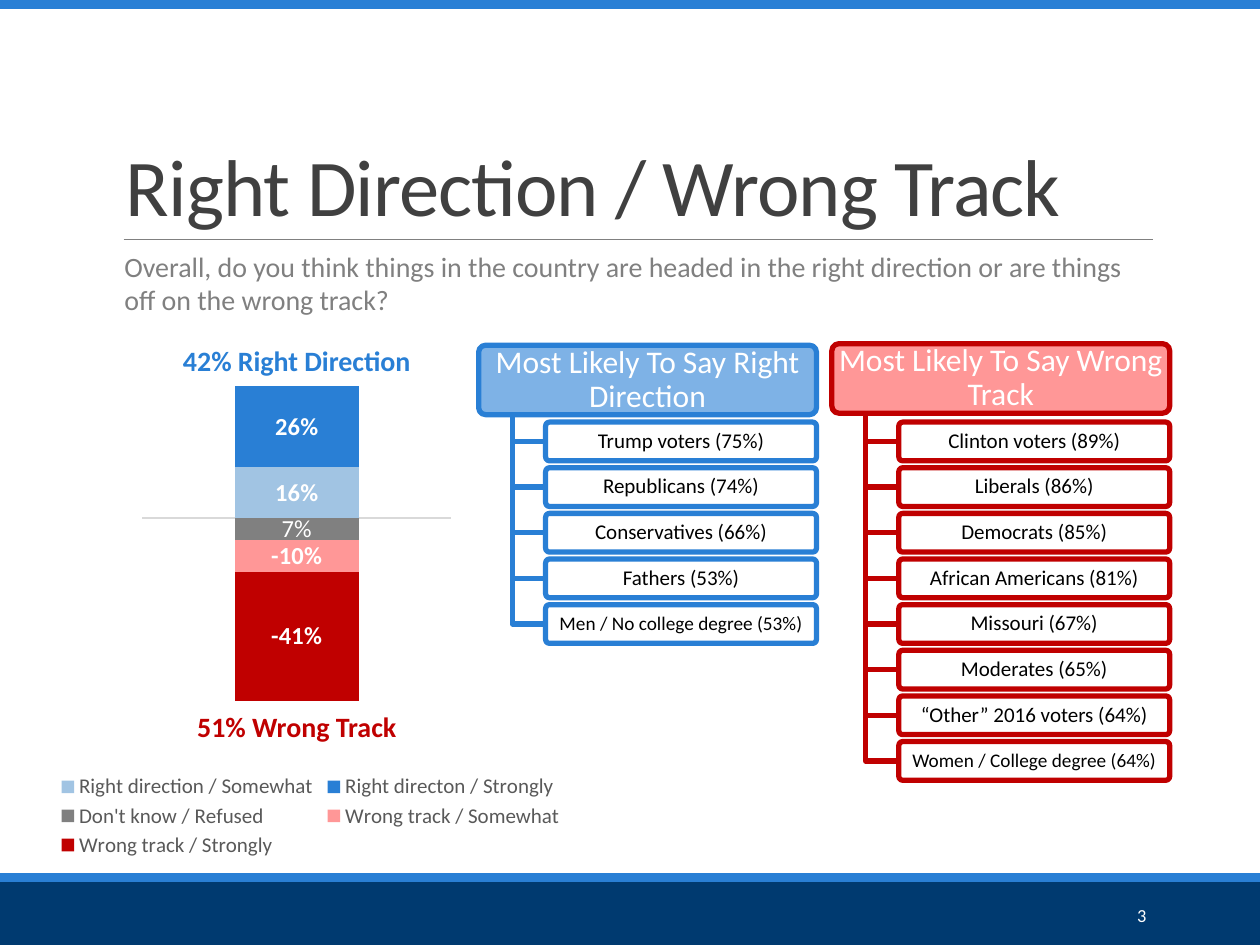
"""Builds the polling slide on right direction versus wrong track."""
import lxml.etree
import pptx
import pptx.chart.data
import pptx.dml.color
import pptx.enum.chart
import pptx.enum.shapes
import pptx.enum.text
import pptx.oxml.ns
import pptx.util
from dataclasses import dataclass

Cm, Pt = pptx.util.Cm, pptx.util.Pt
qn = pptx.oxml.ns.qn
ALIGN, ANCHOR = pptx.enum.text.PP_ALIGN, pptx.enum.text.MSO_ANCHOR
SHAPE = pptx.enum.shapes.MSO_SHAPE


@dataclass(frozen=True)
class Theme:
    """Colours, typeface and type sizes of the slide."""
    font: str = "Calibri"
    navy: str = "003A70"
    blue: str = "297FD5"
    soft_blue: str = "7EB2E6"
    pale_blue: str = "A1C4E3"
    red: str = "C00000"
    pale_red: str = "FF9797"
    grey: str = "808080"
    dark: str = "404040"
    legend: str = "595959"
    rule: str = "D9D9D9"
    white: str = "FFFFFF"
    black: str = "000000"
    title: float = 46
    header: float = 18
    body: float = 16
    label: float = 14
    item: float = 12
    small: float = 11
    number: float = 10.5


THEME = Theme()

BANDS = [(17.78, 1.27, THEME.navy), (17.6, 0.18, THEME.blue), (0, 0.18, THEME.blue)]

TEXTS = [
    ("Right Direction / Wrong Track", (2.29, 0.79, 20.96, 4.04),
     dict(size=THEME.title, color=THEME.dark),
     dict(anchor=ANCHOR.BOTTOM, spacing=0.85, tracking=-50)),
    ("3", (20.62, 17.93, 2.74, 1.02), dict(size=THEME.number, color=THEME.white),
     dict(align=ALIGN.RIGHT, anchor=ANCHOR.MIDDLE)),
    ("Overall, do you think things in the country are headed in the right direction "
     "or are things off on the wrong track?", (2.26, 4.9, 21.11, 1.63),
     dict(size=THEME.body, color=THEME.grey), {}),
]
TOTALS = [
    ("42% Right Direction", (3.28, 6.81, 5.41, 0.94),
     dict(size=THEME.body, color=THEME.blue, bold=True), dict(align=ALIGN.CENTER)),
    ("51% Wrong Track", (3.28, 14.17, 5.41, 0.94),
     dict(size=THEME.body, color=THEME.red, bold=True), dict(align=ALIGN.CENTER)),
]

PANELS = [
    dict(title="Most Likely To Say Right Direction", left=9.65, top=6.96,
         fill=THEME.soft_blue, line=THEME.blue,
         groups=["Trump voters (75%)", "Republicans (74%)", "Conservatives (66%)",
                 "Fathers (53%)", "Men / No college degree (53%)"]),
    dict(title="Most Likely To Say Wrong Track", left=16.77, top=6.93,
         fill=THEME.pale_red, line=THEME.red,
         groups=["Clinton voters (89%)", "Liberals (86%)", "Democrats (85%)",
                 "African Americans (81%)", "Missouri (67%)", "Moderates (65%)",
                 "“Other” 2016 voters (64%)", "Women / College degree (64%)"]),
]
HEADER_WIDTH, HEADER_HEIGHT = 6.81, 1.4
TRUNK_INDENT, GROUP_INDENT = 0.68, 1.35
GROUP_TOP, GROUP_STEP, GROUP_HEIGHT = 8.51, 0.92, 0.78

SERIES = [
    ("Right direction / Somewhat", 0.16, THEME.pale_blue),
    ("Right directon / Strongly", 0.26, THEME.blue),
    ("Don't know / Refused", -0.07, THEME.grey),
    ("Wrong track / Somewhat", -0.10, THEME.pale_red),
    ("Wrong track / Strongly", -0.41, THEME.red),
]
CUSTOM_LABELS = {"Don't know / Refused": "7%"}


def rgb(value):
    return pptx.dml.color.RGBColor.from_string(value)


def apply(target, values):
    for name, value in values.items():
        setattr(target, name, value)


def style_font(font, size, color, bold=False):
    apply(font, dict(name=THEME.font, size=Pt(size), bold=bold))
    font.fill.solid()
    font.fill.fore_color.rgb = rgb(color)


def paint(shape, fill=None, line=None, width=3):
    for part, color in ((shape.fill, fill), (shape.line.fill, line)):
        if color:
            part.solid()
            part.fore_color.rgb = rgb(color)
        else:
            part.background()
    if line:
        shape.line.width = Pt(width)
    shape.shadow.inherit = False


def write(box, text, font, align=ALIGN.LEFT, anchor=ANCHOR.TOP, spacing=1.0,
          inset=None, tracking=None):
    frame = box.text_frame
    apply(frame, dict(word_wrap=True, vertical_anchor=anchor))
    if inset is not None:
        sides = ("left", "right", "top", "bottom")
        apply(frame, {f"margin_{side}": Cm(inset) for side in sides})
    para = frame.paragraphs[0]
    apply(para, dict(alignment=align, line_spacing=spacing))
    span = para.add_run()
    span.text = text
    style_font(span.font, **font)
    if tracking is not None:
        span.font._element.set("spc", str(tracking))


def add_texts(page, texts):
    for text, place, font, layout in texts:
        write(page.shapes.add_textbox(*map(Cm, place)), text, font, **layout)


def add_frame(page):
    for top, height, color in BANDS:
        band = page.shapes.add_shape(SHAPE.RECTANGLE, 0, Cm(top), Cm(25.4), Cm(height))
        paint(band, color)
    rule = page.shapes.add_connector(pptx.enum.shapes.MSO_CONNECTOR.STRAIGHT,
                                     Cm(2.49), Cm(4.83), Cm(23.24), Cm(4.83))
    rule.line.color.rgb = rgb(THEME.grey)
    rule.line.width = Pt(0.5)
    lxml.etree.SubElement(rule._element.spPr, qn("a:effectLst"))


def add_card(page, place, text, fill, line, font):
    card = page.shapes.add_shape(SHAPE.ROUNDED_RECTANGLE, *map(Cm, place))
    card.adjustments[0] = 0.1
    paint(card, fill, line)
    write(card, text, font, ALIGN.CENTER, ANCHOR.MIDDLE, 0.9, inset=0.08)


def add_panel(page, title, left, top, fill, line, groups):
    add_card(page, (left, top, HEADER_WIDTH, HEADER_HEIGHT), title, fill, line,
             dict(size=THEME.header, color=THEME.white))
    trunk, bottom, edge = left + TRUNK_INDENT, top + HEADER_HEIGHT, left + GROUP_INDENT
    for index, group in enumerate(groups):
        row = GROUP_TOP + index * GROUP_STEP
        middle = row + GROUP_HEIGHT / 2
        builder = page.shapes.build_freeform(Cm(trunk), Cm(bottom))
        builder.add_line_segments([(Cm(trunk), Cm(middle)), (Cm(edge), Cm(middle))],
                                  close=False)
        paint(builder.convert_to_shape(), line=line)
        size = THEME.small if "degree" in group else THEME.item
        add_card(page, (edge, row, HEADER_WIDTH - GROUP_INDENT, GROUP_HEIGHT), group,
                 THEME.white, line, dict(size=size, color=THEME.black))


def place_part(element, index, values):
    for old in element.findall(qn("c:layout")):
        element.remove(old)
    layout = lxml.etree.Element(qn("c:layout"))
    manual = lxml.etree.SubElement(layout, qn("c:manualLayout"))
    for name, value in values.items():
        lxml.etree.SubElement(manual, qn(f"c:{name}")).set("val", str(value))
    element.insert(index, layout)


def add_opinion_chart(page):
    kinds = pptx.enum.chart
    data = pptx.chart.data.CategoryChartData(number_format="0%")
    data.categories = [" "]
    for name, value, _ in SERIES:
        data.add_series(name, [value])
    chart = page.shapes.add_chart(kinds.XL_CHART_TYPE.COLUMN_STACKED, Cm(0.53), Cm(6.63),
                                  Cm(11.13), Cm(10.85), data).chart
    apply(chart, dict(has_title=False, has_legend=True))
    style_font(chart.font, THEME.item, THEME.legend)
    apply(chart.legend, dict(position=kinds.XL_LEGEND_POSITION.BOTTOM,
                             include_in_layout=False))
    style_font(chart.legend.font, THEME.item, THEME.legend)
    apply(chart.value_axis, dict(minimum_scale=-0.8, maximum_scale=0.6, visible=False,
                                 has_major_gridlines=False))
    axis = chart.category_axis
    apply(axis, dict(major_tick_mark=kinds.XL_TICK_MARK.NONE, has_major_gridlines=False))
    axis.format.line.color.rgb = rgb(THEME.rule)
    axis.format.line.width = Pt(0.75)
    plot = chart.plots[0]
    apply(plot, dict(gap_width=150, overlap=100, vary_by_categories=False))
    for series, (name, _, color) in zip(plot.series, SERIES):
        series.invert_if_negative = False
        series.format.fill.solid()
        series.format.fill.fore_color.rgb = rgb(color)
        labels = series.data_labels
        apply(labels, dict(show_value=True, number_format="0%",
                           number_format_is_linked=False))
        style_font(labels.font, THEME.label, THEME.white, True)
        if name in CUSTOM_LABELS:
            para = series.points[0].data_label.text_frame.paragraphs[0]
            span = para.add_run()
            span.text = CUSTOM_LABELS[name]
            style_font(span.font, THEME.label, THEME.white)
    place_part(plot._element.getparent(), 0,
               dict(layoutTarget="inner", xMode="edge", yMode="edge",
                    x=0.21, y=0, w=0.56, h=0.82))
    place_part(chart.legend._element, 1,
               dict(xMode="edge", yMode="edge", x=0.05, y=0.82, w=0.93, h=0.17))


def main():
    deck = pptx.Presentation()
    apply(deck, dict(slide_width=Cm(25.4), slide_height=Cm(19.05)))
    page = deck.slides.add_slide(deck.slide_layouts[6])
    add_frame(page)
    add_texts(page, TEXTS)
    for panel in PANELS:
        add_panel(page, **panel)
    add_opinion_chart(page)
    add_texts(page, TOTALS)
    deck.save("out.pptx")


if __name__ == "__main__":
    main()
